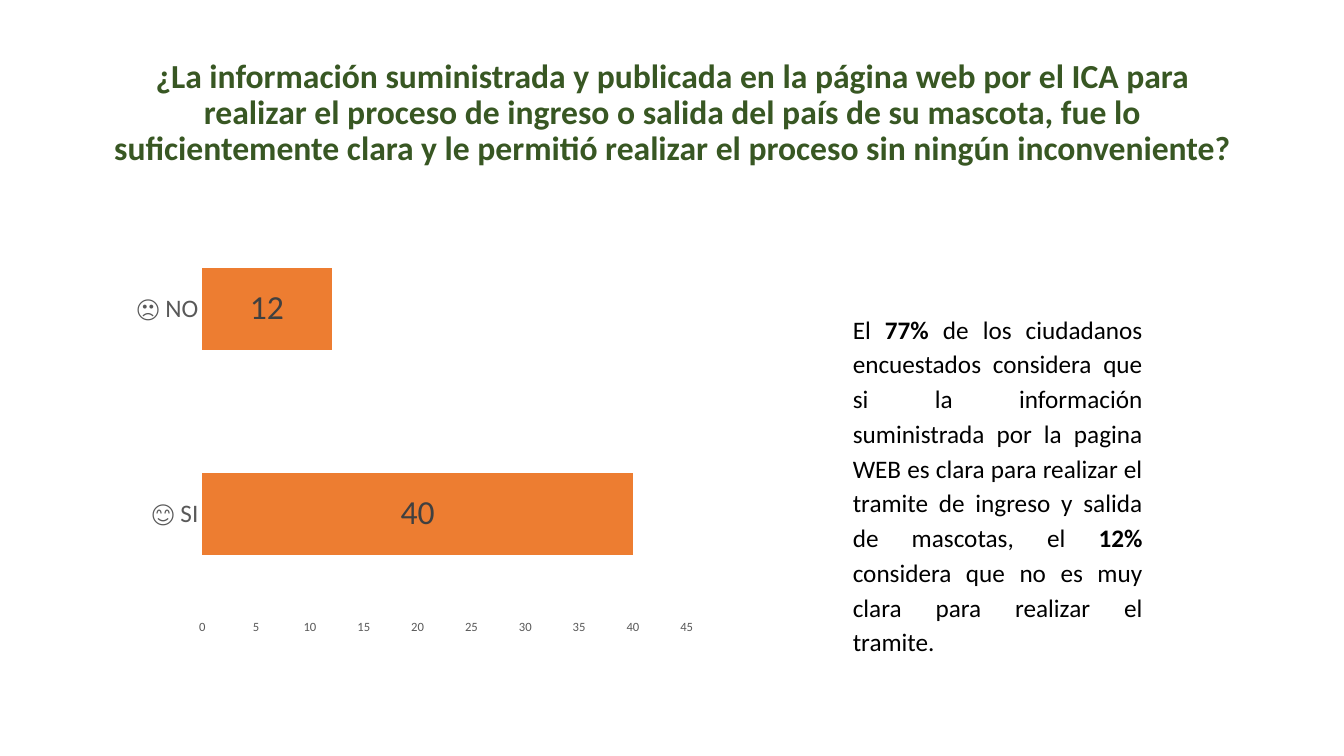
from pptx import Presentation
from pptx.chart.data import CategoryChartData
from pptx.dml.color import RGBColor
from pptx.enum.chart import XL_CHART_TYPE, XL_LABEL_POSITION, XL_TICK_MARK
from pptx.enum.text import MSO_ANCHOR, PP_ALIGN
from pptx.util import Inches, Pt

FACE = "Calibri"
TITLE = ("¿La información suministrada y publicada en la página web por el ICA "
         "para realizar el proceso de ingreso o salida del país de su mascota, "
         "fue lo suficientemente clara y le permitió realizar el proceso sin "
         "ningún inconveniente?")
NOTE = [
    ("El ", False),
    ("77% ", True),
    ("de los ciudadanos encuestados considera que si la información "
     "suministrada por la pagina WEB es clara para realizar el tramite de "
     "ingreso y salida de mascotas, el ", False),
    ("12% ", True),
    ("considera que no es muy clara para realizar el tramite.", False),
]
VOTES = {"😊 SI": 40, "🙁 NO": 12}


def color(code):
    return RGBColor.from_string(code)


def style(font, size, code, bold=False):
    font.name = FACE
    font.size = Pt(size)
    font.bold = bold
    font.color.rgb = color(code)


def add_text(slide, box, runs, size, code, align, gap, anchor):
    frame = slide.shapes.add_textbox(*map(Inches, box)).text_frame
    frame.word_wrap = True
    frame.vertical_anchor = anchor
    para = frame.paragraphs[0]
    para.alignment = align
    para.line_spacing = gap
    for text, bold in runs:
        run = para.add_run()
        run.text = text
        style(run.font, size, code, bold)
    return para


def add_title(slide, box):
    add_text(slide, box, [(TITLE, True)], 24, "385723",
             PP_ALIGN.CENTER, 0.9, MSO_ANCHOR.MIDDLE)


def add_note(slide, box):
    para = add_text(slide, box, NOTE, 18, "000000",
                    PP_ALIGN.JUSTIFY, 1.15, MSO_ANCHOR.TOP)
    # Indent both sides of the paragraph
    props = para._p.get_or_add_pPr()
    props.set("marL", str(Inches(0.75)))
    props.set("marR", str(Inches(0.99)))


def add_bars(slide, box):
    data = CategoryChartData()
    data.categories = list(VOTES)
    data.add_series("Series 1", list(VOTES.values()))
    chart = slide.shapes.add_chart(
        XL_CHART_TYPE.BAR_STACKED, *map(Inches, box), data).chart
    chart.has_title = False
    chart.has_legend = False
    style(chart.font, 10, "000000")

    # Axes: labels only
    for axis, size in ((chart.category_axis, 18), (chart.value_axis, 9)):
        axis.has_major_gridlines = False
        axis.major_tick_mark = XL_TICK_MARK.NONE
        axis.minor_tick_mark = XL_TICK_MARK.NONE
        axis.format.line.fill.background()
        style(axis.tick_labels.font, size, "595959")
    chart.value_axis.minimum_scale = 0
    chart.value_axis.maximum_scale = 45
    chart.value_axis.major_unit = 5

    # Bars and their values
    plot = chart.plots[0]
    plot.gap_width = 150
    plot.overlap = 100
    plot.vary_by_categories = False
    bars = plot.series[0]
    bars.format.fill.solid()
    bars.format.fill.fore_color.rgb = color("ED7D31")
    labels = bars.data_labels
    labels.show_value = True
    labels.position = XL_LABEL_POSITION.CENTER
    style(labels.font, 24, "404040")


def main():
    deck = Presentation()
    deck.slide_width = Inches(13.33)
    deck.slide_height = Inches(7.5)
    slide = deck.slides.add_slide(deck.slide_layouts[6])
    add_title(slide, (0.92, 0.4, 11.5, 1.45))
    add_note(slide, (7.61, 3.02, 4.81, 3.22))
    add_bars(slide, (1.24, 1.96, 5.75, 4.43))
    deck.save("out.pptx")


if __name__ == "__main__":
    main()
